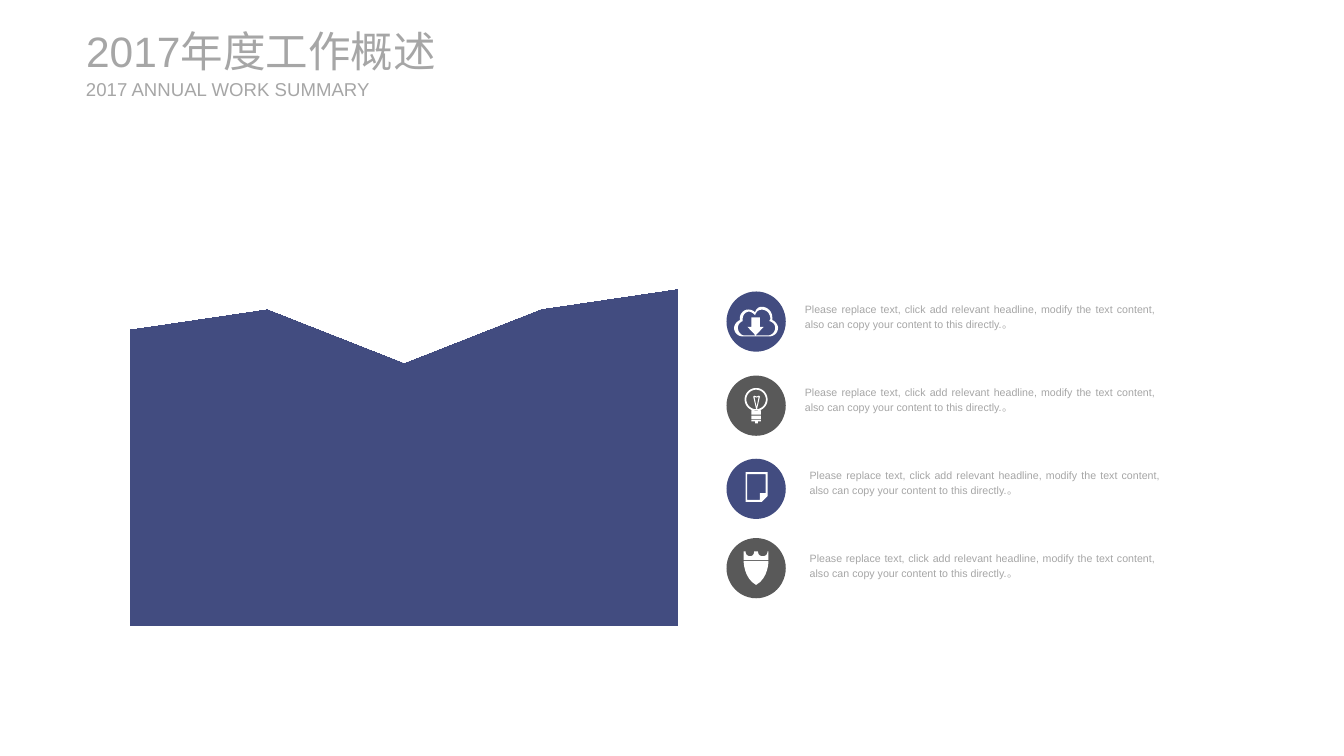
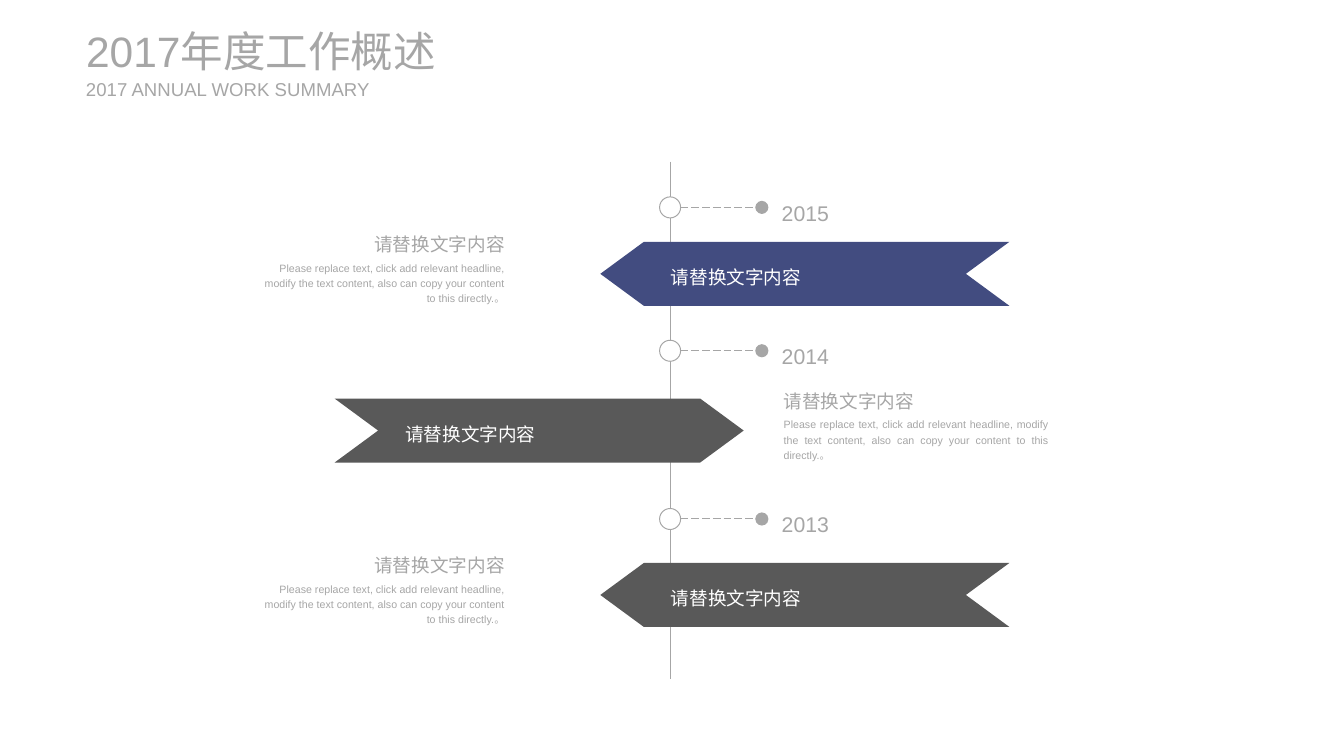
import math
from dataclasses import dataclass

import pptx
import pptx.chart.data
import pptx.dml.color
import pptx.enum.chart
import pptx.enum.dml
import pptx.enum.shapes
import pptx.enum.text
import pptx.oxml
import pptx.oxml.ns
import pptx.util
from pptx.util import Inches

ALIGN = pptx.enum.text.PP_ALIGN
SHAPE = pptx.enum.shapes.MSO_SHAPE

TITLE = "2017年度工作概述"
SUBTITLE = "2017 ANNUAL WORK SUMMARY"
HEADING = "请替换文字内容"
HEADING_WIDTH = 1.58
BLURB = ("Please replace text, click add relevant headline, modify the text "
         "content, also can copy your content to this directly.。")


@dataclass(frozen=True)
class Theme:
    font: str = "Arial"
    blue: str = "424C80"
    dark: str = "595959"
    grey: str = "A6A6A6"
    white: str = "FFFFFF"
    title: int = 32
    chart: int = 18
    year: int = 16
    heading: int = 14
    body: int = 8
    hairline: float = 0.75


THEME = Theme()


def rgb(code):
    return pptx.dml.color.RGBColor.from_string(code)


def outline(start, *steps, samples=8):
    """Points of a closed contour; a step is a point (2 numbers) or a Bézier curve (6)."""
    points = [start]
    for step in steps:
        if len(step) == 2:
            points.append(step)
            continue
        x0, y0 = points[-1]
        x1, y1, x2, y2, x3, y3 = step
        for i in range(1, samples + 1):
            t = i / samples
            a, b, c, d = (1 - t) ** 3, 3 * t * (1 - t) ** 2, 3 * t * t * (1 - t), t ** 3
            points.append((a * x0 + b * x1 + c * x2 + d * x3,
                           a * y0 + b * y1 + c * y2 + d * y3))
    return points


def circle(x, y, radius, sides=40):
    angles = [2 * math.pi * i / sides for i in range(sides)]
    return [(x + radius * math.cos(a), y + radius * math.sin(a)) for a in angles]


# Icon contours, in hundredths of an inch from the top left of the badge.
CLOUD = [
    outline((48, 30), (48, 29, 48, 28, 48, 27), (48, 21, 43, 16, 37, 16),
            (31, 16, 30, 22, 30, 22), (30, 22, 27, 18, 21, 19),
            (17, 20, 14, 24, 14, 28), (14, 30), (11, 31, 8, 35, 8, 38),
            (8, 43, 12, 47, 17, 47), (45, 47), (50, 47, 54, 43, 54, 38),
            (54, 35, 51, 31, 48, 30)),
    outline((43, 46), (19, 46), (15, 46, 12, 42, 12, 38), (12, 35, 14, 32, 17, 31),
            (17, 30, 17, 30, 17, 29), (17, 25, 19, 22, 23, 21),
            (27, 21, 30, 25, 30, 25), (30, 25, 31, 19, 37, 19),
            (42, 19, 46, 23, 46, 29), (46, 29, 45, 30, 45, 31),
            (49, 32, 51, 35, 51, 38), (51, 42, 48, 46, 43, 46)),
    [(26, 27), (35, 27), (35, 37), (39, 37), (30.5, 46), (22, 37), (26, 37)],
]
BULB = [
    circle(31, 25, 12), circle(31, 25, 10.2),
    [(26, 36.5), (36, 36.5), (36, 41), (26, 41)],
    [(26, 42), (36, 42), (36, 45.3), (26, 45.3)],
    [(26, 46), (36, 46), (36, 48), (33, 48), (33, 50), (30, 50), (30, 48), (26, 48)],
    [(28, 22), (29, 21), (31.5, 22), (34, 21), (35, 22), (32, 35), (31, 35)],
    [(31.5, 33), (29.3, 22.3), (31.5, 23), (33.7, 22.3)],
]
PAGE = [
    [(20, 14), (20, 45), (37, 45), (43, 39), (43, 14)],
    [(21.5, 43), (21.5, 16), (41, 16), (41, 36), (35, 36), (35, 43)],
]
SHIELD = [
    outline((31, 49), (44, 42, 44, 24, 44, 24), (18, 24), (18, 24, 18, 42, 31, 49)),
    outline((43, 14), (43, 17, 41, 19, 38, 19), (35, 19, 33, 17, 33, 14), (29, 14),
            (29, 17, 27, 19, 25, 19), (22, 19, 20, 17, 20, 14), (18, 14), (18, 23),
            (44, 23), (44, 14)),
]


class Deck:
    def __init__(self, theme):
        self.theme = theme
        self.presentation = pptx.Presentation()
        self.presentation.slide_width = Inches(14.06)
        self.presentation.slide_height = Inches(7.91)
        self.slide = None

    def new_slide(self):
        self.slide = self.presentation.slides.add_slide(self.presentation.slide_layouts[6])

    def titles(self):
        for top, width, height, words, size in (
                (0.26, 4.32, 0.54, TITLE, self.theme.title),
                (0.81, 3.07, 0.24, SUBTITLE, self.theme.heading)):
            self.text(0.9, top, width, height, words, size, align=None, spacing=None,
                      inset=(0, 0), anchor=pptx.enum.text.MSO_ANCHOR.MIDDLE)

    def text(self, left, top, width, height, words, size, color=None,
             align=ALIGN.JUSTIFY, spacing=1.2, inset=(0.1, 0.05), wrap=True, anchor=None):
        box = self.slide.shapes.add_textbox(
            Inches(left), Inches(top), Inches(width), Inches(height))
        frame = box.text_frame
        frame.text = words
        frame.word_wrap = wrap
        frame.auto_size = pptx.enum.text.MSO_AUTO_SIZE.SHAPE_TO_FIT_TEXT
        frame.margin_left = frame.margin_right = Inches(inset[0])
        frame.margin_top = frame.margin_bottom = Inches(inset[1])
        if anchor is not None:
            frame.vertical_anchor = anchor
        paragraph = frame.paragraphs[0]
        paragraph.alignment = align
        paragraph.line_spacing = spacing
        font = paragraph.runs[0].font
        font.name = self.theme.font
        font.size = pptx.util.Pt(size)
        font.color.rgb = rgb(color or self.theme.grey)

    def paint(self, shape, fill, line=None):
        shape.shadow.inherit = False
        shape.fill.solid()
        shape.fill.fore_color.rgb = rgb(fill)
        if line:
            shape.line.color.rgb = rgb(line)
            shape.line.width = pptx.util.Pt(self.theme.hairline)
        else:
            shape.line.fill.background()

    def shape(self, kind, left, top, width, height, fill, line=None):
        shape = self.slide.shapes.add_shape(
            kind, Inches(left), Inches(top), Inches(width), Inches(height))
        self.paint(shape, fill, line)
        return shape

    def badge(self, left, top, fill, contours):
        """A disc with a white icon on it."""
        self.shape(SHAPE.OVAL, left, top, 0.62, 0.63, fill)
        placed = [[(Inches(left + x / 100), Inches(top + y / 100)) for x, y in contour]
                  for contour in contours]
        builder = self.slide.shapes.build_freeform(*placed[0][0])
        builder.add_line_segments(placed[0][1:], close=True)
        for contour in placed[1:]:
            builder.move_to(*contour[0])
            builder.add_line_segments(contour[1:], close=True)
        self.paint(builder.convert_to_shape(), self.theme.white)

    def line(self, x1, y1, x2, y2, dotted_end=False):
        """A hairline; with dotted_end it is dashed and ends in a dot."""
        connector = self.slide.shapes.add_connector(
            pptx.enum.shapes.MSO_CONNECTOR.STRAIGHT,
            Inches(x1), Inches(y1), Inches(x2), Inches(y2))
        connector.line.color.rgb = rgb(self.theme.grey)
        connector.line.width = pptx.util.Pt(self.theme.hairline)
        properties = connector._element.spPr
        if dotted_end:
            connector.line.dash_style = pptx.enum.dml.MSO_LINE.LONG_DASH
            properties.ln.append(pptx.oxml.parse_xml(
                f'<a:tailEnd {pptx.oxml.ns.nsdecls("a")} type="oval" w="lg" len="lg"/>'))
        properties.append(pptx.oxml.parse_xml(
            f'<a:effectLst {pptx.oxml.ns.nsdecls("a")}/>'))

    def area_chart(self, left, top, width, height, categories, series, plot):
        """An area chart without axes; plot is x, y, w, h as shares of the chart."""
        data = pptx.chart.data.CategoryChartData()
        data.categories = categories
        for name, values, _ in series:
            data.add_series(name, values)
        chart = self.slide.shapes.add_chart(
            pptx.enum.chart.XL_CHART_TYPE.AREA, Inches(left), Inches(top),
            Inches(width), Inches(height), data).chart
        chart.has_legend = chart.has_title = False
        chart.font.name = self.theme.font
        chart.font.size = pptx.util.Pt(self.theme.chart)
        chart.plots[0].vary_by_categories = False
        for area, (_, _, color) in zip(chart.plots[0].series, series):
            area.format.fill.solid()
            area.format.fill.fore_color.rgb = rgb(color)
            area.format.line.color.rgb = rgb(color)
        value_axis = chart.value_axis
        value_axis.minimum_scale, value_axis.maximum_scale = 0, 100
        for axis in (chart.category_axis, value_axis):
            axis.has_major_gridlines = False
            axis.visible = False
        for crossing in chart._chartSpace.iter(pptx.oxml.ns.qn("c:crossBetween")):
            crossing.set("val", "midCat")
        plot_area = chart._chartSpace.chart.plotArea
        for old in plot_area.findall(pptx.oxml.ns.qn("c:layout")):
            plot_area.remove(old)
        sizes = "".join(f'<c:{key} val="{share}"/>' for key, share in zip("xywh", plot))
        plot_area.insert(0, pptx.oxml.parse_xml(
            f'<c:layout {pptx.oxml.ns.nsdecls("c")}><c:manualLayout>'
            '<c:layoutTarget val="inner"/><c:xMode val="edge"/><c:yMode val="edge"/>'
            f'{sizes}</c:manualLayout></c:layout>'))

    def heading(self, left, top, align=ALIGN.LEFT, color=None):
        self.text(left, top, HEADING_WIDTH, 0.38, HEADING, self.theme.heading, color,
                  align=align, wrap=False)

    def banner(self, left, top, fill, points_left):
        chevron = self.shape(SHAPE.CHEVRON, left, top, 4.28, 0.67, fill)
        chevron.adjustments[0] = 0.68
        if points_left:
            chevron.rotation = 180
        self.heading(left + 0.64, top + 0.16, color=self.theme.white)

    def story(self, left, top, width, body_align, heading_align):
        """A heading with its paragraph below."""
        indent = width - HEADING_WIDTH if heading_align == ALIGN.RIGHT else 0
        self.heading(left + indent, top, heading_align)
        self.text(left, top + 0.32, width, 0.59, BLURB, self.theme.body, align=body_align)


def chart_slide(deck):
    theme = deck.theme
    deck.new_slide()
    deck.area_chart(1.25, 2.63, 5.96, 4, ["1", "2", "3", "4", "5"], [
        ("Series 1", (88, 94, 78, 94, 100), theme.blue),
        ("Series 2", (69, 56, 62, 66, 88), theme.dark),
        ("Series 3", (47, 47, 47, 59, 56), theme.blue),
        ("Series 4", (62, 38, 38, 28, 34), theme.dark),
    ], plot=(0.02, 0.1, 0.96, 0.88))
    points = [
        (3.05, theme.blue, CLOUD, 8.37, 3.77),
        (3.93, theme.dark, BULB, 8.37, 3.77),
        (4.8, theme.blue, PAGE, 8.42, 3.77),
        (5.63, theme.dark, SHIELD, 8.42, 3.72),
    ]
    for row, (top, fill, icon, text_left, text_width) in enumerate(points):
        deck.badge(7.6, top, fill, icon)
        deck.text(text_left, 3.11 + 0.87 * row, text_width, 0.38, BLURB, theme.body,
                  inset=(0.05, 0.03))
    deck.titles()


def timeline_slide(deck):
    theme = deck.theme
    axis, ring = 7.01, 0.22
    deck.new_slide()
    deck.line(axis, 1.69, axis, 7.1)
    events = [
        ("2015", 2.17, 2.53, theme.blue, True),
        ("2014", 3.67, 4.17, theme.dark, False),
        ("2013", 5.43, 5.89, theme.dark, True),
    ]
    for year, middle, banner_top, fill, points_left in events:
        deck.shape(SHAPE.OVAL, axis - ring / 2, middle - ring / 2, ring, ring,
                   theme.white, theme.grey)
        deck.line(axis + ring / 2, middle, 7.97, middle, dotted_end=True)
        deck.text(8.08, middle - 0.18, 0.7, 0.42, year, theme.year, align=ALIGN.LEFT,
                  wrap=False)
        deck.banner(6.28 if points_left else 3.5, banner_top, fill, points_left)
        story_top = banner_top - 0.19
        if points_left:
            deck.story(2.59, story_top, 2.79, ALIGN.RIGHT, ALIGN.RIGHT)
        else:
            deck.story(8.1, story_top, 2.97, ALIGN.JUSTIFY, ALIGN.LEFT)
    deck.titles()


def main():
    deck = Deck(THEME)
    chart_slide(deck)
    timeline_slide(deck)
    deck.presentation.save("out.pptx")


if __name__ == "__main__":
    main()
